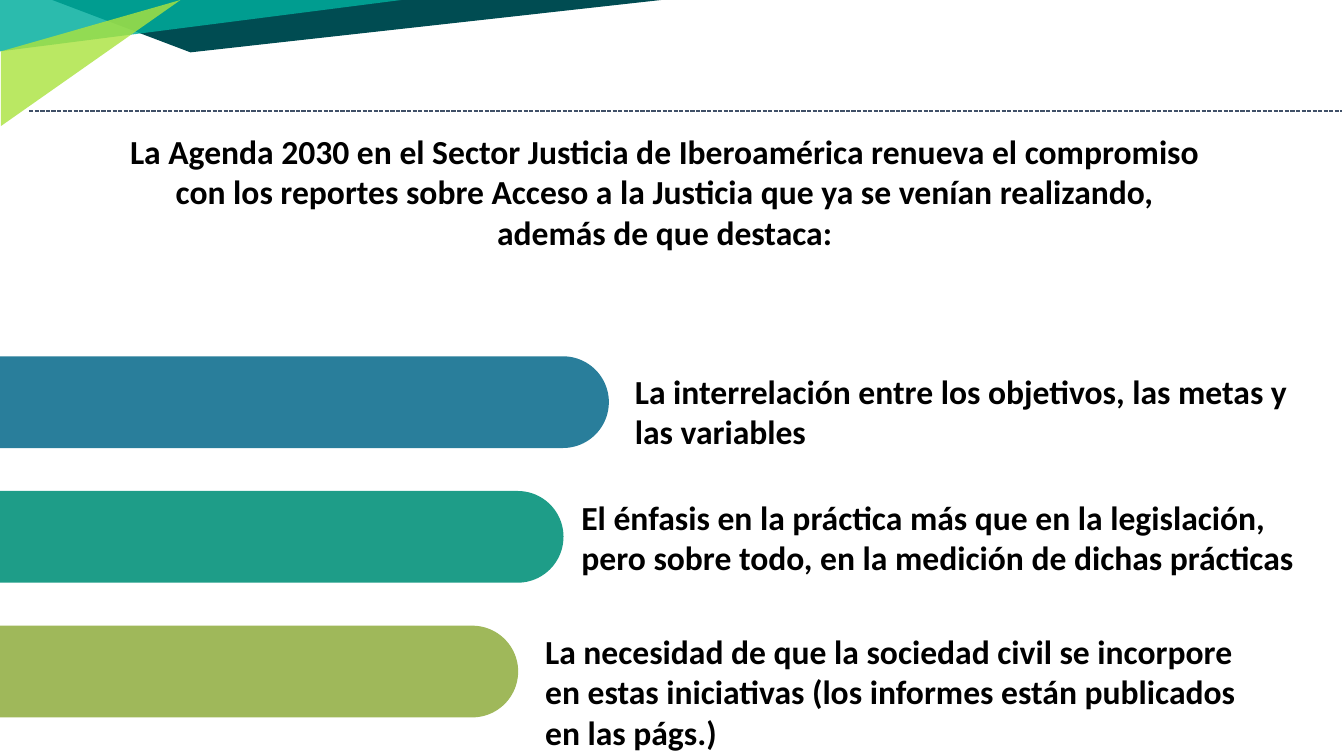
from dataclasses import dataclass

from pptx import Presentation
from pptx.dml.color import RGBColor
from pptx.enum.dml import MSO_LINE
from pptx.enum.shapes import MSO_CONNECTOR, MSO_SHAPE
from pptx.enum.text import MSO_ANCHOR, MSO_AUTO_SIZE, PP_ALIGN
from pptx.oxml.ns import qn
from pptx.oxml.xmlchemy import OxmlElement
from pptx.util import Pt


@dataclass
class Shard:
    points: list[tuple[float, float]]
    color: str
    alpha: int = 100


@dataclass
class Point:
    text: str
    color: str
    left: float
    top: float
    width: float
    height: float


SHARDS = [
    Shard([(472.3, 0), (37.4, 0), (136.1, 37.4)], "004C52"),
    Shard([(0, 36.7), (0, 0), (286.6, 0)], "00AE9D", 83),
    Shard([(0.7, 36.7), (0.7, 90), (128.9, 0)], "ABE33F", 81),
]
POINTS = [
    Point("La interrelación entre los objetivos, las metas y las variables",
          "297E9B", 446.4, 261.4, 481, 65.5),
    Point("El énfasis en la práctica más que en la legislación, "
          "pero sobre todo, en la medición de dichas prácticas",
          "1E9D88", 408.2, 351.4, 524.2, 65.5),
    Point("La necesidad de que la sociedad civil se incorpore en estas "
          "iniciativas (los informes están publicados en las págs.)",
          "9FB85A", 382.3, 447.1, 535, 95),
]
TITLE = "\n".join([
    "La Agenda 2030 en el Sector Justicia de Iberoamérica renueva el compromiso",
    "con los reportes sobre Acceso a la Justicia que ya se venían realizando,",
    "además de que destaca:",
])
BAR_TOP, BAR_STEP, BAR_TALL = 254.5, 96.2, 65.5
BAR_LONG, BAR_CUT = 434.9, 32.4


def paint(fmt, color: str) -> None:
    fmt.solid()
    fmt.fore_color.rgb = RGBColor.from_string(color)


def style(shape, color: str, alpha: int = 100) -> None:
    paint(shape.fill, color)
    if alpha < 100:
        tag = OxmlElement("a:alpha")
        tag.set("val", str(alpha * 1000))
        next(shape._element.spPr.iter(qn("a:srgbClr"))).append(tag)
    shape.line.fill.background()
    shape.shadow.inherit = False


def write(shape, text: str, *, size: float = 24, font: str = "Calibri",
          color: str = "000000", bold: bool = True, align=PP_ALIGN.LEFT) -> None:
    frame = shape.text_frame
    frame.text = text
    frame.word_wrap = True
    frame.auto_size = MSO_AUTO_SIZE.NONE
    frame.vertical_anchor = MSO_ANCHOR.TOP
    for para in frame.paragraphs:
        para.alignment = align
        para.line_spacing = 1.0
        para.space_before = Pt(0)
        for run in para.runs:
            run.font.size = Pt(size)
            run.font.name = font
            run.font.bold = bold
            paint(run.font.fill, color)


def draw_rule(slide) -> None:
    rule = slide.shapes.add_connector(
        MSO_CONNECTOR.STRAIGHT, Pt(20.9), Pt(79.2), Pt(958.3), Pt(79.2))
    paint(rule.line.fill, "415168")
    rule.line.width = Pt(1)
    rule.line.dash_style = MSO_LINE.SQUARE_DOT
    rule._element.spPr.append(OxmlElement("a:effectLst"))


def draw_shard(slide, shard: Shard) -> None:
    first, *rest = [(Pt(x), Pt(y)) for x, y in shard.points]
    path = slide.shapes.build_freeform(*first)
    path.add_line_segments(rest, close=True)
    style(path.convert_to_shape(), shard.color, shard.alpha)


def draw_point(slide, row: int, point: Point) -> None:
    size = BAR_LONG - row * BAR_CUT
    mid = BAR_TOP + row * BAR_STEP + BAR_TALL / 2
    bar = slide.shapes.add_shape(
        MSO_SHAPE.ROUND_2_SAME_RECTANGLE,
        Pt((size - BAR_TALL) / 2), Pt(mid - size / 2), Pt(BAR_TALL), Pt(size))
    bar.rotation = 90
    bar.adjustments[0] = 0.5
    bar.adjustments[1] = 0
    style(bar, point.color)
    box = slide.shapes.add_textbox(
        Pt(point.left), Pt(point.top), Pt(point.width), Pt(point.height))
    write(box, point.text)


def main() -> None:
    deck = Presentation()
    deck.slide_width, deck.slide_height = Pt(960), Pt(540)
    slide = deck.slides.add_slide(deck.slide_layouts[5])
    paint(slide.background.fill, "FFFFFF")
    draw_rule(slide)
    for shard in SHARDS:
        draw_shard(slide, shard)
    title = slide.shapes.title
    title.left, title.top = Pt(37.4), Pt(90)
    title.width, title.height = Pt(874.8), Pt(94.3)
    write(title, TITLE, align=PP_ALIGN.CENTER)
    for row, point in enumerate(POINTS):
        draw_point(slide, row, point)
    deck.save("out.pptx")


if __name__ == "__main__":
    main()
